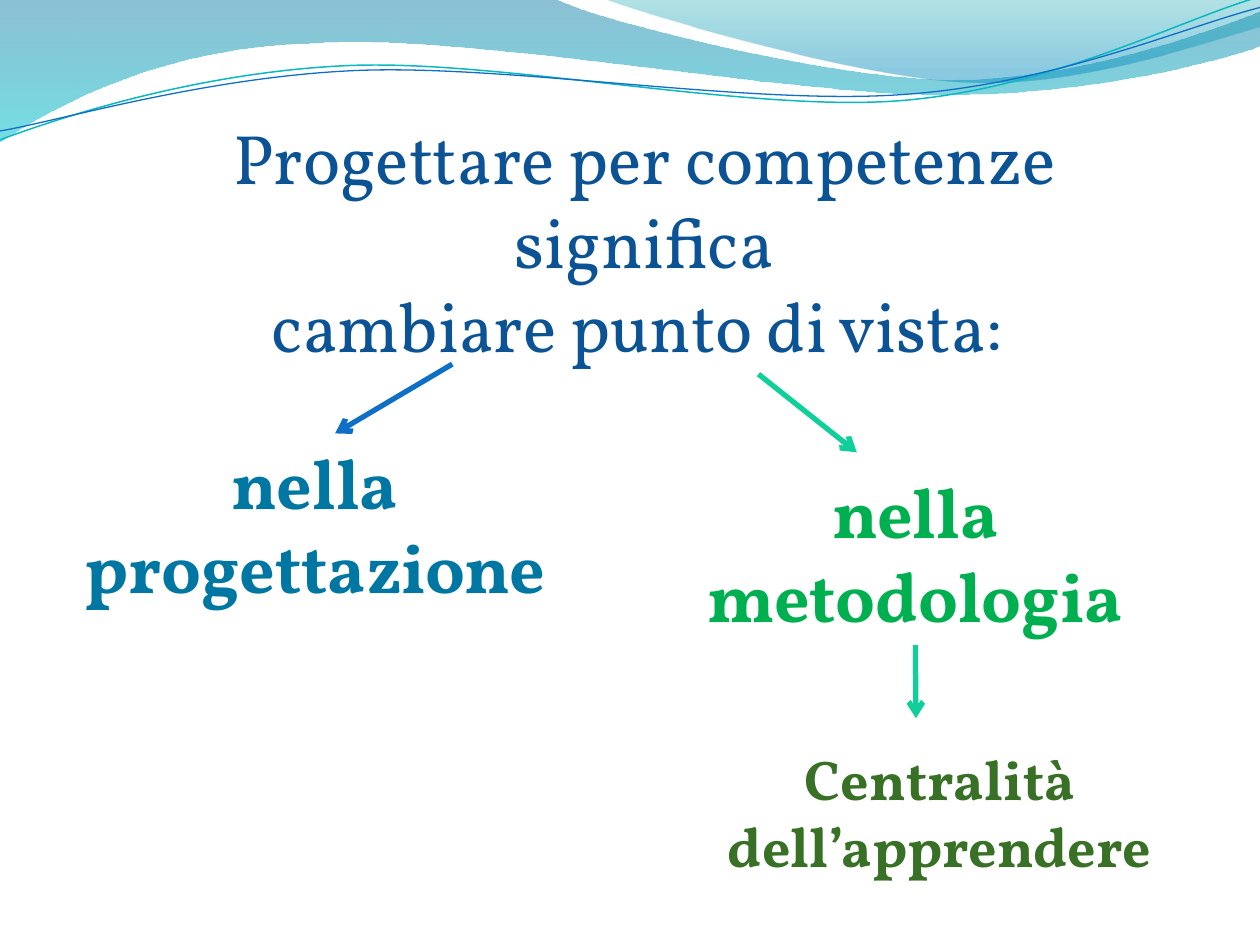
from dataclasses import dataclass
from math import cos, radians, sin

from lxml.etree import SubElement
from pptx import Presentation
from pptx.dml.color import RGBColor
from pptx.enum.shapes import MSO_CONNECTOR
from pptx.enum.text import MSO_ANCHOR, MSO_AUTO_SIZE, PP_ALIGN
from pptx.oxml.ns import qn
from pptx.util import Inches, Pt


@dataclass(frozen=True)
class Theme:
    """Colours, font and sizes of the slide."""
    font: str = "Vollkorn"
    large: int = 40
    medium: int = 32
    arrow_width: float = 3
    title: str = "0B5394"
    planning: str = "0076A3"
    method: str = "00B050"
    learning: str = "387026"
    blue: str = "0F6FC6"
    green: str = "10CF9B"
    teal: str = "0AB8BF"
    broad_wave: tuple = ((0, "0074A1", 45), (1, "00C6CF", 55))
    right_wave: tuple = ((0, "00A1A9", 30), (0.8, "008BBF", 45))


THEME = Theme()
STROKE_TILT = 357.3

BROAD_WAVE = [
    (0, 0), (4.4, -0.01),
    (4.76, 0.17, 6.64, 0.63, 7.58, 0.63), (8.53, 0.63, 9.58, 0.26, 10, 0.09),
    (10.01, 0.36),
    (9.83, 0.44, 8.7, 0.76, 7.46, 0.75), (6.22, 0.75, 3.82, 0.28, 2.57, 0.34),
    (1.29, 0.36, 0.46, 0.83, -0.01, 1.13), (0, 0),
]
RIGHT_WAVE = [
    (4.79, -0.01),
    (5.09, 0.11, 6.82, 0.62, 7.69, 0.65), (8.56, 0.69, 9.61, 0.32, 10, 0.21),
    (10, 0), (4.79, -0.01),
]
TEAL_STROKE = [
    (0, 1.11),
    (0.48, 0.93, 1.58, 0.57, 2.77, 0.52), (3.95, 0.47, 5.93, 0.89, 7.13, 0.8),
    (8.33, 0.71, 9.38, 0.15, 9.98, -0.02),
]
BLUE_STROKE = [
    (0, 1.04),
    (0.47, 0.96, 1.64, 0.61, 2.83, 0.56), (4.03, 0.51, 5.97, 0.84, 7.17, 0.75),
    (8.36, 0.67, 9.41, 0.21, 10, 0.06),
]


def level(outline, center):
    """Turn an outline back by the tilt of the strokes."""
    turn = radians(360 - STROKE_TILT)
    across, down = center
    return [
        tuple(
            value
            for x, y in zip(segment[::2], segment[1::2])
            for value in (
                across + (x - across) * cos(turn) - (y - down) * sin(turn),
                down + (x - across) * sin(turn) + (y - down) * cos(turn),
            )
        )
        for segment in outline
    ]


def draw_outline(shapes, outline, origin, closed):
    """Draw corners and cubic curves, given in inches from the origin."""
    left, top = origin
    points = [
        (Inches(left + x), Inches(top + y))
        for segment in outline
        for x, y in zip(segment[::2], segment[1::2])
    ]
    builder = shapes.build_freeform(*points[0], scale=1.0)
    builder.add_line_segments(points[1:], close=closed)
    wave = builder.convert_to_shape()
    wave.shadow.inherit = False

    lines = iter(list(wave.element.iter(qn("a:lnTo"))))
    for segment in outline[1:]:
        first = next(lines)
        if len(segment) == 6:
            curve = first.makeelement(qn("a:cubicBezTo"))
            first.addprevious(curve)
            for line in (first, next(lines), next(lines)):
                curve.append(line[0])
                line.getparent().remove(line)
    return wave


def add_waves(slide, origin):
    """Place the translucent waves and the group of two thin strokes."""
    for outline, stops in ((BROAD_WAVE, THEME.broad_wave), (RIGHT_WAVE, THEME.right_wave)):
        wave = draw_outline(slide.shapes, outline, origin, True)
        wave.line.fill.background()
        wave.fill.gradient()
        wave.fill.gradient_angle = 270
        for stop, (position, color, _) in zip(wave.fill.gradient_stops, stops):
            stop.position = position
            stop.color.rgb = RGBColor.from_string(color)
        tints = list(wave.element.spPr.iter(qn("a:srgbClr")))
        for tint, (_, _, opacity) in zip(tints, stops):
            SubElement(tint, qn("a:alpha")).set("val", str(opacity * 1000))

    strokes = slide.shapes.add_group_shape()
    for outline, center, color, width in (
        (TEAL_STROKE, (4.99, 0.58), THEME.teal, 0.85),
        (BLUE_STROKE, (5, 0.59), THEME.blue, 0.75),
    ):
        stroke = draw_outline(strokes.shapes, level(outline, center), origin, False)
        stroke.rotation = STROKE_TILT
        stroke.fill.background()
        stroke.line.color.rgb = RGBColor.from_string(color)
        stroke.line.width = Pt(width)


def write_centred(frame, lines, size, color, bold):
    """Fill a text frame with centred lines."""
    frame_format = {
        "word_wrap": True,
        "auto_size": MSO_AUTO_SIZE.SHAPE_TO_FIT_TEXT,
        "vertical_anchor": MSO_ANCHOR.TOP,
    }
    for name, value in frame_format.items():
        setattr(frame, name, value)
    font_format = {"name": THEME.font, "size": Pt(size), "bold": bold}
    for index, line in enumerate(lines):
        paragraph = frame.add_paragraph() if index else frame.paragraphs[0]
        paragraph.alignment = PP_ALIGN.CENTER
        run = paragraph.add_run()
        run.text = line
        for name, value in font_format.items():
            setattr(run.font, name, value)
        run.font.color.rgb = RGBColor.from_string(color)


def add_heading(slide, box):
    """Place the title in its box, in front of the waves."""
    heading = slide.shapes.title
    for side, length in zip(("left", "top", "width", "height"), box):
        setattr(heading, side, Inches(length))
    lines = ("Progettare per competenze", "significa", "cambiare punto di vista: ")
    write_centred(heading.text_frame, lines, THEME.large, THEME.title, False)
    heading.element.getparent().append(heading.element)


def add_statement(slide, box, text, size, color):
    """Place one bold statement in its box."""
    statement = slide.shapes.add_textbox(*map(Inches, box))
    write_centred(statement.text_frame, (text,), size, color, True)
    return statement


def add_arrow(slide, start, end, color):
    """Draw an arrow between two points."""
    arrow = slide.shapes.add_connector(
        MSO_CONNECTOR.STRAIGHT, *map(Inches, (*start, *end))
    )
    arrow.line.color.rgb = RGBColor.from_string(color)
    arrow.line.width = Pt(THEME.arrow_width)
    outline = arrow.element.spPr.find(qn("a:ln"))
    SubElement(outline, qn("a:tailEnd")).set("type", "arrow")
    SubElement(arrow.element.spPr, qn("a:effectLst"))
    return arrow


def build_slide(presentation):
    """Build the slide on planning by competences."""
    slide = presentation.slides.add_slide(presentation.slide_layouts[5])
    add_waves(slide, (0, 0))
    add_heading(slide, (1.25, 0.86, 7.73, 2.12))
    add_statement(slide, (0.31, 3.44, 4.38, 1.45), "nella progettazione",
                  THEME.large, THEME.planning)
    method = add_statement(slide, (5.39, 3.67, 3.75, 1.45), "nella metodologia",
                           THEME.large, THEME.method)
    add_statement(slide, (5.47, 5.86, 3.98, 1.18), "Centralità dell’apprendere",
                  THEME.medium, THEME.learning)
    add_arrow(slide, (3.59, 2.89), (2.66, 3.44), THEME.blue)
    add_arrow(slide, (6.02, 2.97), (6.8, 3.59), THEME.green)
    to_learning = add_arrow(slide, (7.27, 5.12), (7.27, 5.7), THEME.green)
    to_learning.begin_connect(method, 2)


def main():
    """Create and save the presentation."""
    presentation = Presentation()
    presentation.slide_width = Inches(10)
    presentation.slide_height = Inches(7.5)
    build_slide(presentation)
    presentation.save("out.pptx")


if __name__ == "__main__":
    main()
